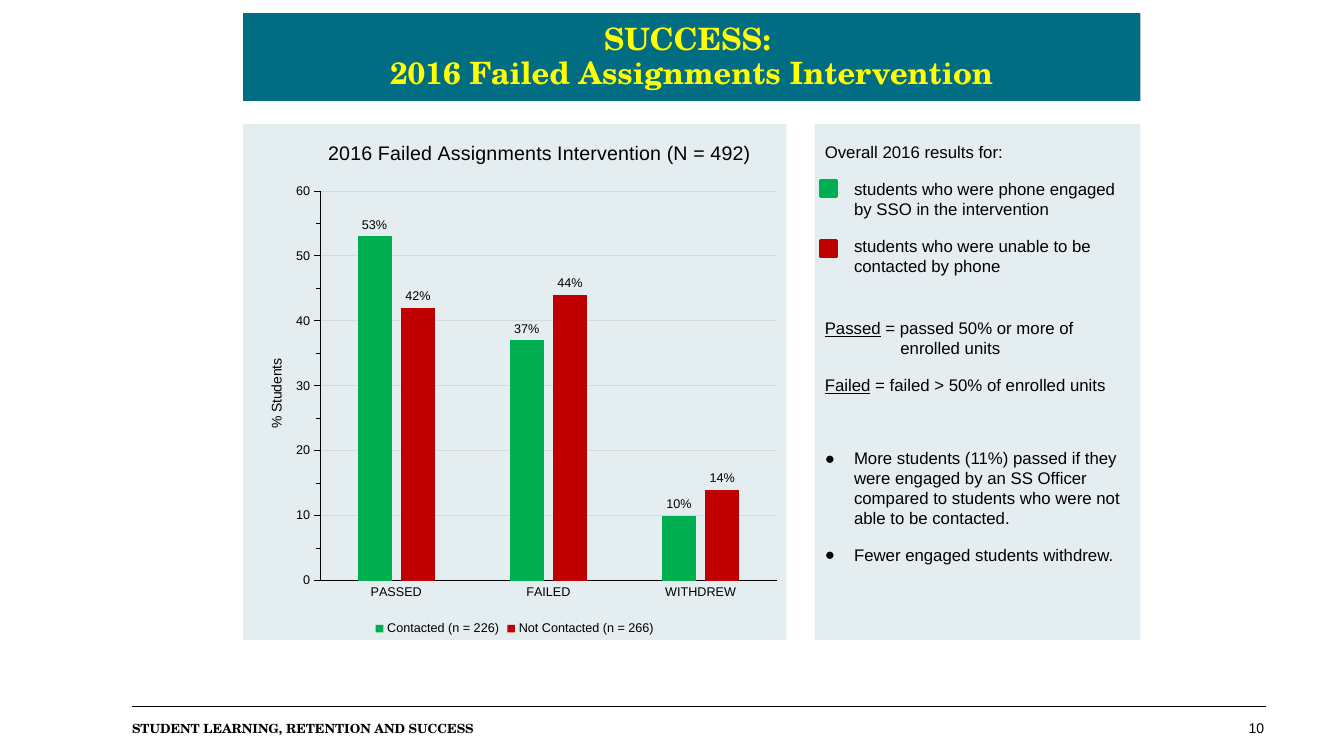
from dataclasses import dataclass

from lxml.etree import SubElement
from pptx import Presentation
from pptx.chart.data import CategoryChartData
from pptx.dml.color import RGBColor
from pptx.enum.chart import XL_CHART_TYPE, XL_LABEL_POSITION, XL_LEGEND_POSITION, XL_TICK_MARK
from pptx.enum.shapes import MSO_CONNECTOR, MSO_SHAPE
from pptx.enum.text import MSO_ANCHOR, MSO_AUTO_SIZE, PP_ALIGN
from pptx.oxml import parse_xml
from pptx.oxml.ns import nsdecls, qn
from pptx.util import Inches, Pt


@dataclass(frozen=True)
class Theme:
    banner: str = "006D82"
    banner_text: str = "FFFF00"
    panel: str = "E4EDF0"
    ink: str = "000000"
    grid: str = "D9D9D9"
    contacted: str = "00B050"
    not_contacted: str = "C00000"
    serif: str = "TeX Gyre Schola"
    sans: str = "Arial"
    title_size: float = 22
    chart_title_size: float = 14
    body_size: float = 12
    label_size: float = 10
    small_size: float = 9


class SlideBuilder:
    def __init__(self, presentation, theme):
        self.theme = theme
        self.width = presentation.slide_width
        self.height = presentation.slide_height
        self.slide = presentation.slides.add_slide(presentation.slide_layouts[5])
        self.shapes = self.slide.shapes

    def box(self, left, top, width, height):
        return (int(self.width * left / 100), int(self.height * top / 100),
                int(self.width * width / 100), int(self.height * height / 100))

    def fill(self, item, color):
        item.fill.solid()
        item.fill.fore_color.rgb = RGBColor.from_string(color)

    def font(self, font, size, color=None, name=None, bold=False):
        font.size = Pt(size)
        font.name = name or self.theme.sans
        font.bold = bold
        font.color.rgb = RGBColor.from_string(color or self.theme.ink)

    def line(self, line, color, width):
        line.color.rgb = RGBColor.from_string(color)
        line.width = Pt(width)

    def frame(self, shape, margins=(0, 0, 0)):
        frame = shape.text_frame
        frame.word_wrap = True
        frame.auto_size = MSO_AUTO_SIZE.NONE
        frame.margin_left = frame.margin_bottom = 0
        frame.margin_top, frame.margin_right = Inches(margins[0]), Inches(margins[1])
        return frame

    def title(self, text, box):
        shape = self.shapes.title
        shape.left, shape.top, shape.width, shape.height = self.box(*box)
        self.fill(shape, self.theme.banner)
        frame = self.frame(shape)
        frame.vertical_anchor = MSO_ANCHOR.MIDDLE
        paragraph = frame.paragraphs[0]
        paragraph.text = text
        paragraph.alignment = PP_ALIGN.CENTER
        paragraph.line_spacing = Pt(24)
        self.font(paragraph.font, self.theme.title_size, self.theme.banner_text, self.theme.serif, True)

    def label(self, text, box, size, name=None, bold=False, alignment=PP_ALIGN.LEFT):
        paragraph = self.frame(self.shapes.add_textbox(*self.box(*box))).paragraphs[0]
        paragraph.text = text
        paragraph.alignment = alignment
        self.font(paragraph.font, size, name=name, bold=bold)

    def panel(self, items, box):
        shape = self.shapes.add_textbox(*self.box(*box))
        self.fill(shape, self.theme.panel)
        frame = self.frame(shape, (0.18, 0.1))
        for index, (before, left, indent, bullet, term, text) in enumerate(items):
            paragraph = frame.add_paragraph() if index else frame.paragraphs[0]
            properties = paragraph._p.get_or_add_pPr()
            properties.set("marL", str(Inches(left)))
            properties.set("indent", str(Inches(indent)))
            if bullet:
                SubElement(properties, qn("a:buFont")).set("typeface", self.theme.sans)
                SubElement(properties, qn("a:buChar")).set("char", "●")
            paragraph.space_before = Pt(before)
            paragraph.line_spacing = Pt(14.3)
            self.font(paragraph.font, self.theme.body_size)
            if term:
                run = paragraph.add_run()
                run.text = term
                run.font.underline = True
            paragraph.add_run().text = text

    def swatch(self, color, box):
        shape = self.shapes.add_shape(MSO_SHAPE.RECTANGLE, *self.box(*box))
        shape.shadow.inherit = False
        self.fill(shape, color)
        self.line(shape.line, color, 2)

    def rule(self, left, right, level):
        start_x, y, end_x, _ = self.box(left, level, right, 0)
        connector = self.shapes.add_connector(MSO_CONNECTOR.STRAIGHT, start_x, y, end_x, y)
        SubElement(connector._element.spPr, qn("a:effectLst"))
        self.line(connector.line, self.theme.ink, 0.5)

    def layout(self, element, position, **values):
        for existing in element.findall(qn("c:layout")):
            element.remove(existing)
        layout = element.makeelement(qn("c:layout"))
        manual = SubElement(layout, qn("c:manualLayout"))
        if "w" in values:
            SubElement(manual, qn("c:layoutTarget")).set("val", "inner")
        for key in ("x", "y"):
            SubElement(manual, qn(f"c:{key}Mode")).set("val", "edge")
        for key, value in values.items():
            SubElement(manual, qn(f"c:{key}")).set("val", str(value))
        element.insert(position, layout)

    def heading(self, title, text, size, x, y):
        paragraph = title.text_frame.paragraphs[0]
        paragraph.text = text
        self.font(paragraph.font, size)
        self.layout(title._element, 1, x=x, y=y)

    def chart(self, heading, axis_heading, categories, series, box):
        theme = self.theme
        data = CategoryChartData(number_format="0")
        data.categories = categories
        for name, values, _ in series:
            data.add_series(name, values)
        chart = self.shapes.add_chart(XL_CHART_TYPE.COLUMN_CLUSTERED, *self.box(*box), data).chart
        self.font(chart.font, theme.label_size)
        space = chart._chartSpace
        space.find(qn("c:chart")).addnext(parse_xml(
            f'<c:spPr {nsdecls("c", "a")}><a:solidFill><a:srgbClr val="{theme.panel}"/></a:solidFill>'
            '<a:ln><a:noFill/></a:ln></c:spPr>'))
        self.layout(space.find(".//" + qn("c:plotArea")), 0, x=0.142, y=0.13, w=0.84, h=0.755)
        self.heading(chart.chart_title, heading, theme.chart_title_size, 0.15, 0.025)
        chart.has_legend = True
        chart.legend.position = XL_LEGEND_POSITION.BOTTOM
        chart.legend.include_in_layout = False
        self.font(chart.legend.font, theme.small_size)
        for axis in (chart.category_axis, chart.value_axis):
            self.font(axis.tick_labels.font, theme.small_size)
            self.line(axis.format.line, theme.ink, 0.75)
        chart.category_axis.major_tick_mark = XL_TICK_MARK.NONE
        axis = chart.value_axis
        axis.minimum_scale, axis.maximum_scale = 0, 60
        axis.major_unit, axis.minor_unit = 10, 5
        axis.major_tick_mark = axis.minor_tick_mark = XL_TICK_MARK.OUTSIDE
        self.line(axis.major_gridlines.format.line, theme.grid, 0.75)
        self.heading(axis.axis_title, axis_heading, theme.label_size, 0.04, 0.45)
        plot = chart.plots[0]
        plot.vary_by_categories = False
        plot.gap_width, plot.overlap = 219, -27
        for columns, (_, _, color) in zip(plot.series, series):
            self.fill(columns.format, color)
            labels = columns.data_labels
            labels.show_value = True
            labels.number_format = '0"%"'
            labels.number_format_is_linked = False
            labels.position = XL_LABEL_POSITION.OUTSIDE_END
            self.font(labels.font, theme.small_size)


def main():
    presentation = Presentation()
    presentation.slide_width, presentation.slide_height = Inches(13.33), Inches(7.5)
    theme = Theme()
    builder = SlideBuilder(presentation, theme)
    builder.rule(9.83, 94.22, 93.47)
    builder.title("SUCCESS: \v2016 Failed Assignments Intervention", (18.08, 1.73, 66.77, 11.6))
    builder.panel([
        (0, 0.1, 0, False, "", "Overall 2016 results for:"),
        (12, 0.39, 0, False, "", "students who were phone engaged by SSO in the intervention"),
        (12, 0.39, 0, False, "", "students who were unable to be contacted by phone"),
        (30, 0.85, -0.75, False, "Passed", " = passed 50% or more of enrolled units"),
        (12, 0.1, 0, False, "Failed", " = failed > 50% of enrolled units"),
        (38.5, 0.39, -0.29, True, "", "More students (11%) passed if they were engaged by an SS Officer "
         "compared to students who were not able to be contacted."),
        (12, 0.39, -0.29, True, "", "Fewer engaged students withdrew."),
    ], (60.62, 16.4, 24.23, 68.27))
    builder.label("STUDENT LEARNING, RETENTION AND SUCCESS", (9.83, 95.33, 77.57, 2.8),
                  theme.small_size, theme.serif, True)
    builder.label("10", (90.17, 95.2, 3.9, 2.93), theme.label_size, alignment=PP_ALIGN.RIGHT)
    builder.chart("2016 Failed Assignments Intervention (N = 492)", "% Students",
                  ("PASSED", "FAILED", "WITHDREW"),
                  [("Contacted (n = 226)", (53, 37, 10), theme.contacted),
                   ("Not Contacted (n = 266)", (42, 44, 14), theme.not_contacted)],
                  (18.08, 16.4, 40.44, 68.27))
    for row, color in enumerate((theme.contacted, theme.not_contacted)):
        builder.swatch(color, (61.07, 23.87 + 8 * row, 1.2, 2.13))
    presentation.save("out.pptx")


if __name__ == "__main__":
    main()
